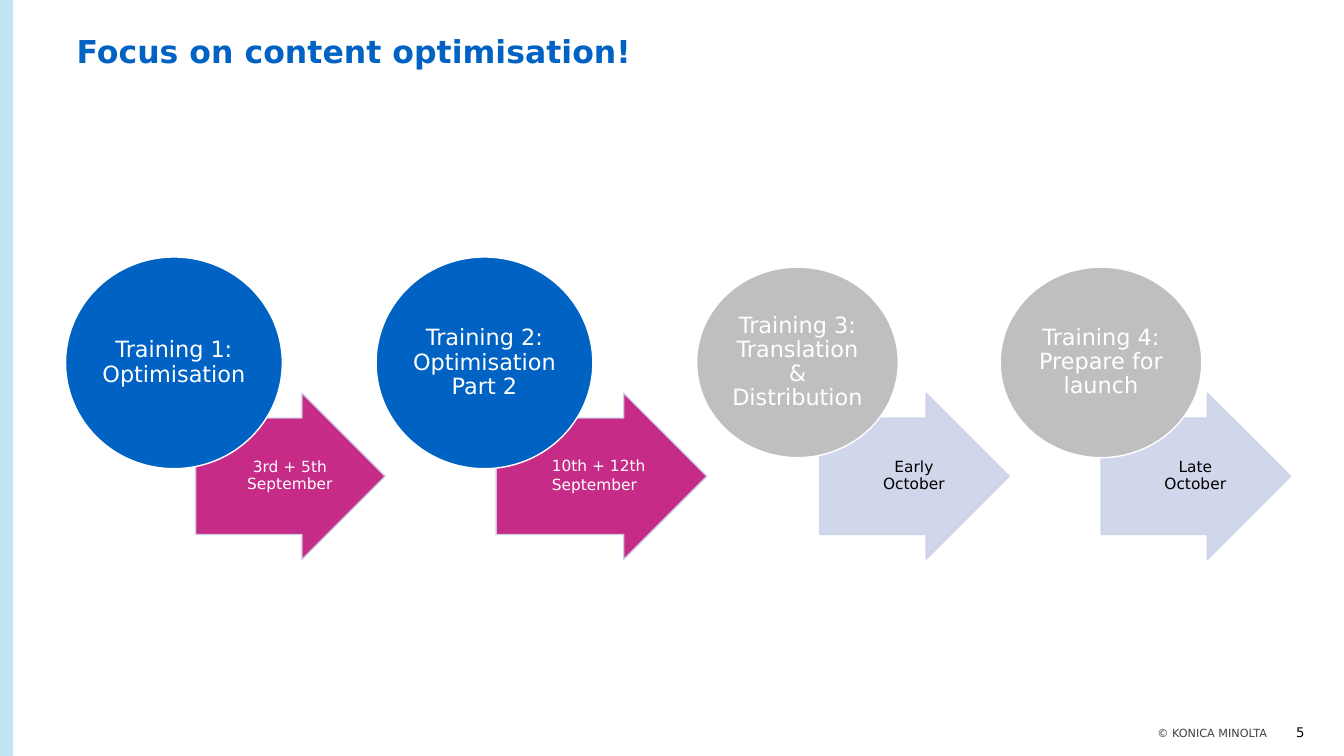
from lxml import etree
from pptx import Presentation
from pptx import util as u
from pptx.dml import color
from pptx.enum import shapes, text
from pptx.oxml import ns

TITLE = "Focus on content optimisation!"
FOOT = [
    ("5", (1257, 718, 37, 16), 9.5, "black"),
    ("© KONICA MINOLTA", (745, 721, 512, 13), 8, "dark"),
]
STEPS = [
    {"name": "Training 1: Optimisation", "date": ["3rd + 5th September"],
     "disc": (65, 255, 215, 210), "arrow": (194, 188), "done": True},
    {"name": "Training 2: Optimisation Part 2", "date": ["10th + 12th", "September"],
     "disc": (373, 255, 215, 210), "arrow": (492, 209), "done": True},
    {"name": "Training 3: Translation & Distribution", "date": ["Early October"],
     "disc": (691, 265, 200, 189), "arrow": (813, 188), "done": False},
    {"name": "Training 4: Prepare for launch", "date": ["Late October"],
     "disc": (992, 265, 200, 189), "arrow": (1092, 188), "done": False},
]
TOP, HIGH = 390, 165
HEX = {"blue": "0062C2", "sky": "C1E5F4", "pink": "C0167B", "pale": "CCD3E9",
       "grey": "BFBFBF", "dark": "404040", "black": "000000", "white": "FFFFFF"}
FONT = "DejaVu Sans"
PX = 9144


def px(*vals):
    return [round(v * PX) for v in vals]


def rgb(key):
    return color.RGBColor.from_string(HEX[key])


def fade(shape):
    for node in shape.element.spPr.iter(ns.qn("a:srgbClr")):
        etree.SubElement(node, ns.qn("a:alpha")).set("val", "90000")


def draw(kind, box, fill, line=None):
    shape = slide.shapes.add_shape(kind, *px(*box))
    shape.shadow.inherit = False
    shape.fill.solid()
    shape.fill.fore_color.rgb = rgb(fill)
    if line:
        shape.line.color.rgb = rgb(line)
        shape.line.width = u.Pt(1)
    else:
        shape.line.fill.background()
    return shape


def write(shape, lines, size, ink, align, anchor, pad=(0, 0, 0, 0), lead=None, bold=False):
    frame = shape.text_frame
    frame.word_wrap = True
    frame.auto_size = text.MSO_AUTO_SIZE.NONE
    frame.vertical_anchor = anchor
    (frame.margin_left, frame.margin_top,
     frame.margin_right, frame.margin_bottom) = px(*pad)
    for i, line in enumerate(lines):
        para = frame.paragraphs[0] if i == 0 else frame.add_paragraph()
        para.alignment = align
        if lead:
            para.line_spacing = lead
        if i < len(lines) - 1:
            para.space_after = u.Pt(1.65)
        run = para.add_run()
        run.text = line
        run.font.name = FONT
        run.font.size = u.Pt(size)
        run.font.bold = bold
        run.font.color.rgb = rgb(ink)


def label(box, *args, **opts):
    write(slide.shapes.add_textbox(*px(*box)), *args, **opts)


def inset(box, left, top, wide, high):
    x, y, w, h = box
    return x + w * left, y + h * top, w * wide, h * high


show = Presentation()
show.slide_width, show.slide_height = u.Inches(13.33), u.Inches(7.5)
slide = show.slides.add_slide(show.slide_layouts[5])
ALIGN, ANCHOR = text.PP_ALIGN, text.MSO_ANCHOR
SHAPE = shapes.MSO_SHAPE

draw(SHAPE.RECTANGLE, (0, 0, 13, 750), "sky")
title = slide.shapes.title
title.left, title.top, title.width, title.height = px(76, 36, 1061, 35)
write(title, [TITLE], 22.5, "blue", ALIGN.LEFT, ANCHOR.TOP, lead=0.9, bold=True)
for words, box, size, ink in FOOT:
    label(box, [words], size, ink, ALIGN.RIGHT, ANCHOR.BOTTOM)

for step in STEPS:
    done, disc = step["done"], step["disc"]
    left, wide = step["arrow"]
    box = (left, TOP, wide, HIGH)
    arrow = draw(SHAPE.RIGHT_ARROW, box, "pink" if done else "pale", "pale")
    arrow.adjustments[0], arrow.adjustments[1] = 0.7, 0.5
    fade(arrow)
    align = ALIGN.LEFT if len(step["date"]) > 1 else ALIGN.CENTER
    label(inset(box, 0.25, 0.15, 0.49, 0.7), step["date"], 11,
          "white" if done else "black", align, ANCHOR.MIDDLE, pad=(3, 1, 2, 1), lead=0.9)
    draw(SHAPE.OVAL, disc, "blue" if done else "grey", "white")
    label(inset(disc, 0.15, 0.15, 0.7, 0.7), [step["name"]], 16, "white",
          ALIGN.CENTER, ANCHOR.MIDDLE, pad=(1, 1, 1, 1), lead=0.9)

show.save("out.pptx")
